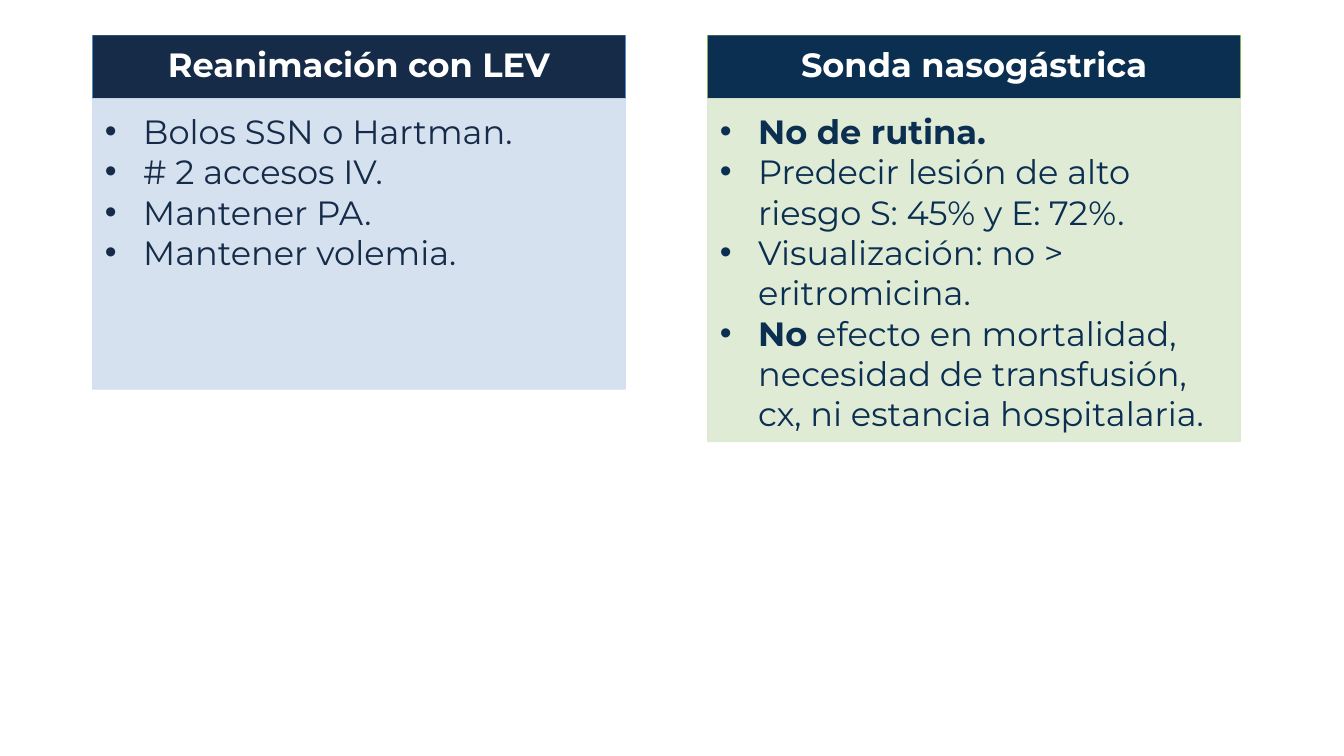
from lxml import etree
from pptx import Presentation
from pptx.dml.color import RGBColor
from pptx.enum.shapes import MSO_SHAPE
from pptx.enum.text import MSO_ANCHOR, MSO_AUTO_SIZE, PP_ALIGN
from pptx.oxml.ns import qn
from pptx.util import Inches, Pt

RECTANGLE = MSO_SHAPE.RECTANGLE
TOP, MIDDLE = MSO_ANCHOR.TOP, MSO_ANCHOR.MIDDLE
LEFT, CENTER = PP_ALIGN.LEFT, PP_ALIGN.CENTER
NO_AUTOFIT = MSO_AUTO_SIZE.NONE

COMPARISON_LAYOUT = 4
FIRST_COLUMN, COLUMN_PITCH, COLUMN_WIDTH = 0.92, 6.1, 5.28
HEADER_TOP, HEADER_HEIGHT = 0.35, 0.63
BODY_TOP = HEADER_TOP + HEADER_HEIGHT
HEADER_INSETS = (0.16, 0.09, 0.16, 0.09)
BODY_INSETS = (0.12, 0.12, 0.16, 0.17)
BULLET_INDENT = 0.38

CARDS = [
    {
        "title": "Reanimación con LEV",
        "dark": "152B48", "edge": "5B9BD5", "light": "D2DEEF",
        "panel_height": 2.88, "text_height": 2.88,
        "items": [
            [("Bolos SSN o Hartman.", False)],
            [("# 2 accesos IV.", False)],
            [("Mantener PA.", False)],
            [("Mantener volemia.", False)],
        ],
    },
    {
        "title": "Sonda nasogástrica",
        "dark": "0B2F51", "edge": "95C557", "light": "DCE9D1",
        "panel_height": 3.4, "text_height": 4.11,
        "items": [
            [("No de rutina.", True)],
            [("Predecir lesión de alto riesgo S: 45% y E: 72%.", False)],
            [("Visualización: no > eritromicina.", False)],
            [("No", True),
             (" efecto en mortalidad, necesidad de transfusión, cx, "
              "ni estancia hospitalaria.", False)],
        ],
    },
]


def color(hex_string):
    return RGBColor.from_string(hex_string)


def set_opacity(shape, percent):
    for color_element in shape.element.spPr.iter(qn("a:srgbClr")):
        alpha = etree.SubElement(color_element, qn("a:alpha"))
        alpha.set("val", str(percent * 1000))


def add_panel(slide, box, fill, line, opacity=100):
    shape = slide.shapes.add_shape(RECTANGLE, *map(Inches, box))
    shape.shadow.inherit = False
    shape.fill.solid()
    shape.fill.fore_color.rgb = color(fill)
    shape.line.color.rgb = color(line)
    shape.line.width = Pt(1)
    if opacity < 100:
        set_opacity(shape, opacity)


def place_text(placeholder, box, insets, anchor):
    placeholder.left, placeholder.top, placeholder.width, placeholder.height = map(Inches, box)
    placeholder.element.getparent().append(placeholder.element)
    frame = placeholder.text_frame
    frame.word_wrap = True
    frame.auto_size = NO_AUTOFIT
    frame.vertical_anchor = anchor
    (frame.margin_left, frame.margin_top,
     frame.margin_right, frame.margin_bottom) = map(Inches, insets)
    return frame


def set_bullet(paragraph, character=None):
    properties = paragraph._p.get_or_add_pPr()
    indent = Inches(BULLET_INDENT) if character else 0
    properties.set("marL", str(indent))
    properties.set("indent", str(-indent))
    if character:
        etree.SubElement(properties, qn("a:buFont")).set("typeface", "Arial")
        etree.SubElement(properties, qn("a:buChar")).set("char", character)
    else:
        etree.SubElement(properties, qn("a:buNone"))


def write_paragraph(paragraph, runs, text_color, alignment, spacing, bullet=None):
    set_bullet(paragraph, bullet)
    paragraph.alignment = alignment
    paragraph.line_spacing = spacing
    paragraph.space_before = Pt(0)
    for text, bold in runs:
        run = paragraph.add_run()
        run.text = text
        run.font.name = "Montserrat"
        run.font.size = Pt(24)
        run.font.bold = bold
        run.font.color.rgb = color(text_color)


def add_header(slide, placeholder, left, card):
    box = (left, HEADER_TOP, COLUMN_WIDTH, HEADER_HEIGHT)
    add_panel(slide, box, card["dark"], card["edge"])
    frame = place_text(placeholder, box, HEADER_INSETS, MIDDLE)
    placeholder.fill.solid()
    placeholder.fill.fore_color.rgb = color(card["dark"])
    write_paragraph(frame.paragraphs[0], [(card["title"], True)], "FFFFFF", CENTER, 0.9)


def add_list(slide, placeholder, left, card):
    panel_box = (left, BODY_TOP, COLUMN_WIDTH, card["panel_height"])
    add_panel(slide, panel_box, card["light"], card["light"], 90)
    text_box = (left, BODY_TOP, COLUMN_WIDTH, card["text_height"])
    frame = place_text(placeholder, text_box, BODY_INSETS, TOP)
    for index, runs in enumerate(card["items"]):
        paragraph = frame.add_paragraph() if index else frame.paragraphs[0]
        write_paragraph(paragraph, runs, card["dark"], LEFT, 1.0, "•")


def main():
    presentation = Presentation()
    presentation.slide_width = Inches(13.33)
    presentation.slide_height = Inches(7.5)
    slide = presentation.slides.add_slide(presentation.slide_layouts[COMPARISON_LAYOUT])
    title, *fields = list(slide.placeholders)[:5]
    title.element.getparent().remove(title.element)
    for column, card in enumerate(CARDS):
        left = FIRST_COLUMN + column * COLUMN_PITCH
        header, body = fields[2 * column:2 * column + 2]
        add_header(slide, header, left, card)
        add_list(slide, body, left, card)
    presentation.save("out.pptx")


if __name__ == "__main__":
    main()
